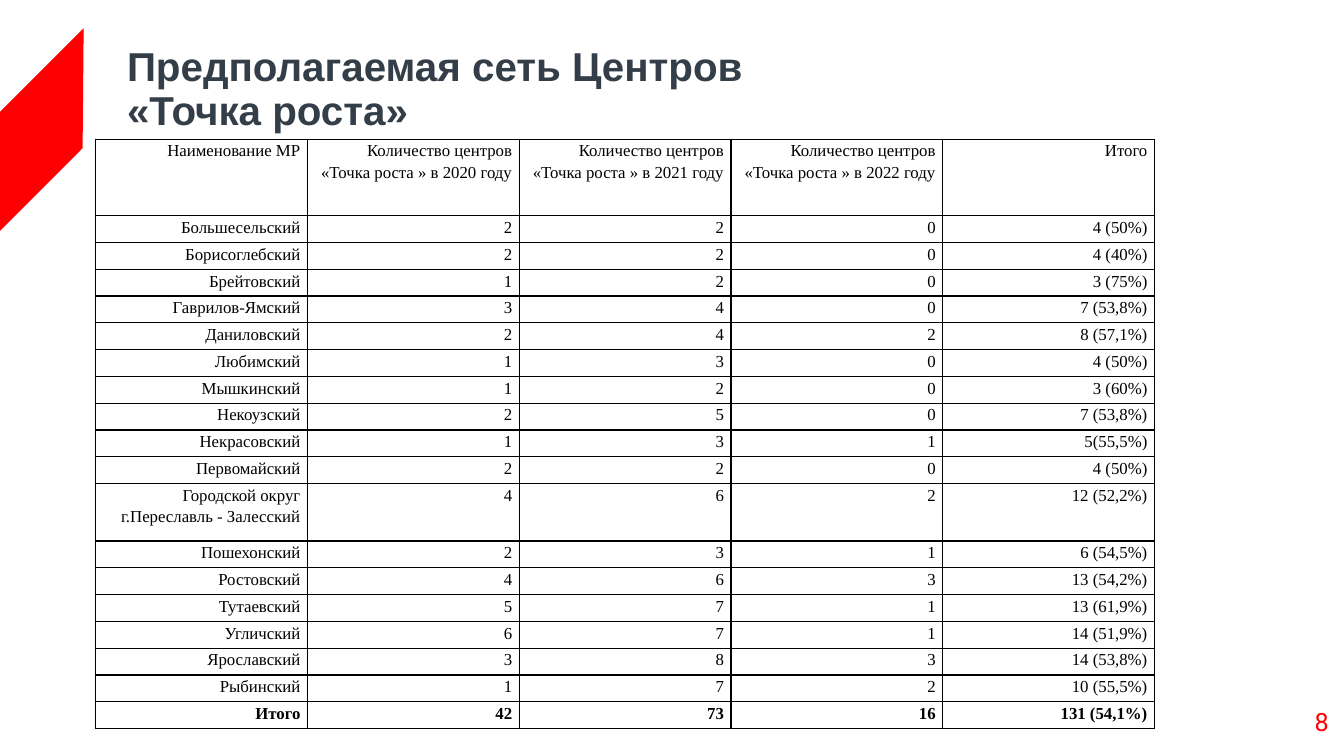
from lxml.etree import SubElement
from pptx import Presentation
from pptx.dml.color import RGBColor
from pptx.enum.text import MSO_ANCHOR as Anchor, PP_ALIGN as Align
from pptx.oxml.ns import qn
from pptx.util import Inches, Pt

COLORS = {"red": "FF0000", "title": "333E48", "black": "000000"}
FORMATS = {
    "title": {"name": "Arial", "size": Pt(28.8), "bold": True, "color": "title"},
    "body": {"name": "Times New Roman", "size": Pt(12), "bold": False, "color": "black"},
    "total": {"name": "Times New Roman", "size": Pt(12), "bold": True, "color": "black"},
    "number": {"name": "Roboto", "size": Pt(18), "bold": False, "color": "red"},
}

HEADER = ["Наименование МР"] + [
    f"Количество центров «Точка роста » в {year} году" for year in (2020, 2021, 2022)
] + ["Итого"]
DISTRICTS = [
    ("Большесельский", 2, 2, 0, "4 (50%)"),
    ("Борисоглебский", 2, 2, 0, "4 (40%)"),
    ("Брейтовский", 1, 2, 0, "3 (75%)"),
    ("Гаврилов-Ямский", 3, 4, 0, "7 (53,8%)"),
    ("Даниловский", 2, 4, 2, "8 (57,1%)"),
    ("Любимский", 1, 3, 0, "4 (50%)"),
    ("Мышкинский", 1, 2, 0, "3 (60%)"),
    ("Некоузский", 2, 5, 0, "7 (53,8%)"),
    ("Некрасовский", 1, 3, 1, "5(55,5%)"),
    ("Первомайский", 2, 2, 0, "4 (50%)"),
    ("Городской округ г.Переславль - Залесский", 4, 6, 2, "12 (52,2%)"),
    ("Пошехонский", 2, 3, 1, "6 (54,5%)"),
    ("Ростовский", 4, 6, 3, "13 (54,2%)"),
    ("Тутаевский", 5, 7, 1, "13 (61,9%)"),
    ("Угличский", 6, 7, 1, "14 (51,9%)"),
    ("Ярославский", 3, 8, 3, "14 (53,8%)"),
    ("Рыбинский", 1, 7, 2, "10 (55,5%)"),
]
TOTAL = ("Итого", 42, 73, 16, "131 (54,1%)")
TALL_ROWS = {0: 0.76, 11: 0.57}


class Page:
    def __init__(self, deck):
        self.slide = deck.slides.add_slide(deck.slide_layouts[6])
        self.shapes = self.slide.shapes

    def fill_para(self, para, lines, style, align, spacing):
        para.alignment, para.line_spacing = align, spacing
        for index, line in enumerate(lines):
            if index:
                para.add_line_break()
            span = para.add_run()
            span.text = line
            for key, value in FORMATS[style].items():
                if key == "color":
                    span.font.color.rgb = RGBColor.from_string(COLORS[value])
                else:
                    setattr(span.font, key, value)

    def text(self, place, lines, style, align=Align.LEFT, spacing=1.0,
             anchor=Anchor.TOP, wrap=True):
        frame = self.shapes.add_textbox(*map(Inches, place)).text_frame
        margins = dict.fromkeys(
            ("margin_left", "margin_top", "margin_right", "margin_bottom"), Inches(0.05))
        for key, value in {**margins, "word_wrap": wrap, "vertical_anchor": anchor}.items():
            setattr(frame, key, value)
        self.fill_para(frame.paragraphs[0], lines, style, align, spacing)

    def polygon(self, points, color):
        start, *rest = [(Inches(x), Inches(y)) for x, y in points]
        builder = self.shapes.build_freeform(*start)
        builder.add_line_segments(rest, close=True)
        shape = builder.convert_to_shape()
        shape.shadow.inherit = False
        shape.fill.solid()
        shape.fill.fore_color.rgb = RGBColor.from_string(COLORS[color])
        shape.line.fill.background()

    def borders(self, cell, color):
        properties = cell._tc.get_or_add_tcPr()
        for index, side in enumerate(("lnL", "lnR", "lnT", "lnB")):
            line = SubElement(properties, qn(f"a:{side}"), w=str(Pt(1)))
            fill = SubElement(line, qn("a:solidFill"))
            SubElement(fill, qn("a:srgbClr"), val=COLORS[color])
            properties.insert(index, line)

    def table(self, place, rows, tall_rows):
        left, top, width, height = place
        table = self.shapes.add_table(len(rows), len(rows[0]), *map(Inches, place)).table
        table.first_row = table.horz_banding = False
        for column in table.columns:
            column.width = Inches(width / len(rows[0]))
        small = (height - sum(tall_rows.values())) / (len(rows) - len(tall_rows))
        cell_format = {"margin_left": Inches(0.07), "margin_right": Inches(0.07),
                       "margin_top": 0, "margin_bottom": 0, "vertical_anchor": Anchor.TOP}
        for row_index, values in enumerate(rows):
            table.rows[row_index].height = Inches(tall_rows.get(row_index, small))
            style = "total" if row_index == len(rows) - 1 else "body"
            for column_index, value in enumerate(values):
                cell = table.cell(row_index, column_index)
                for key, setting in cell_format.items():
                    setattr(cell, key, setting)
                cell.fill.background()
                self.borders(cell, "black")
                self.fill_para(cell.text_frame.paragraphs[0], [str(value)], style,
                               Align.RIGHT, 1.15)


def main():
    deck = Presentation()
    deck.slide_width, deck.slide_height = Inches(13.33), Inches(7.5)
    page = Page(deck)

    # Red band at the left edge
    page.polygon([(0, 2.29), (0, 1.11), (0.83, 0.28), (0.82, 1.47)], "red")

    # Title
    page.text((1.21, 0.4, 8.81, 1), ["Предполагаемая сеть Центров", "«Точка роста»"],
              "title", spacing=0.9, anchor=Anchor.MIDDLE)

    # Centres by district and year
    page.table((0.95, 1.38, 10.5, 5.85), [HEADER, *DISTRICTS, TOTAL], TALL_ROWS)

    # Page number
    page.text((12.85, 6.96, 0.38, 0.39), ["8"], "number", align=Align.RIGHT, wrap=False)

    deck.save("out.pptx")


if __name__ == "__main__":
    main()
